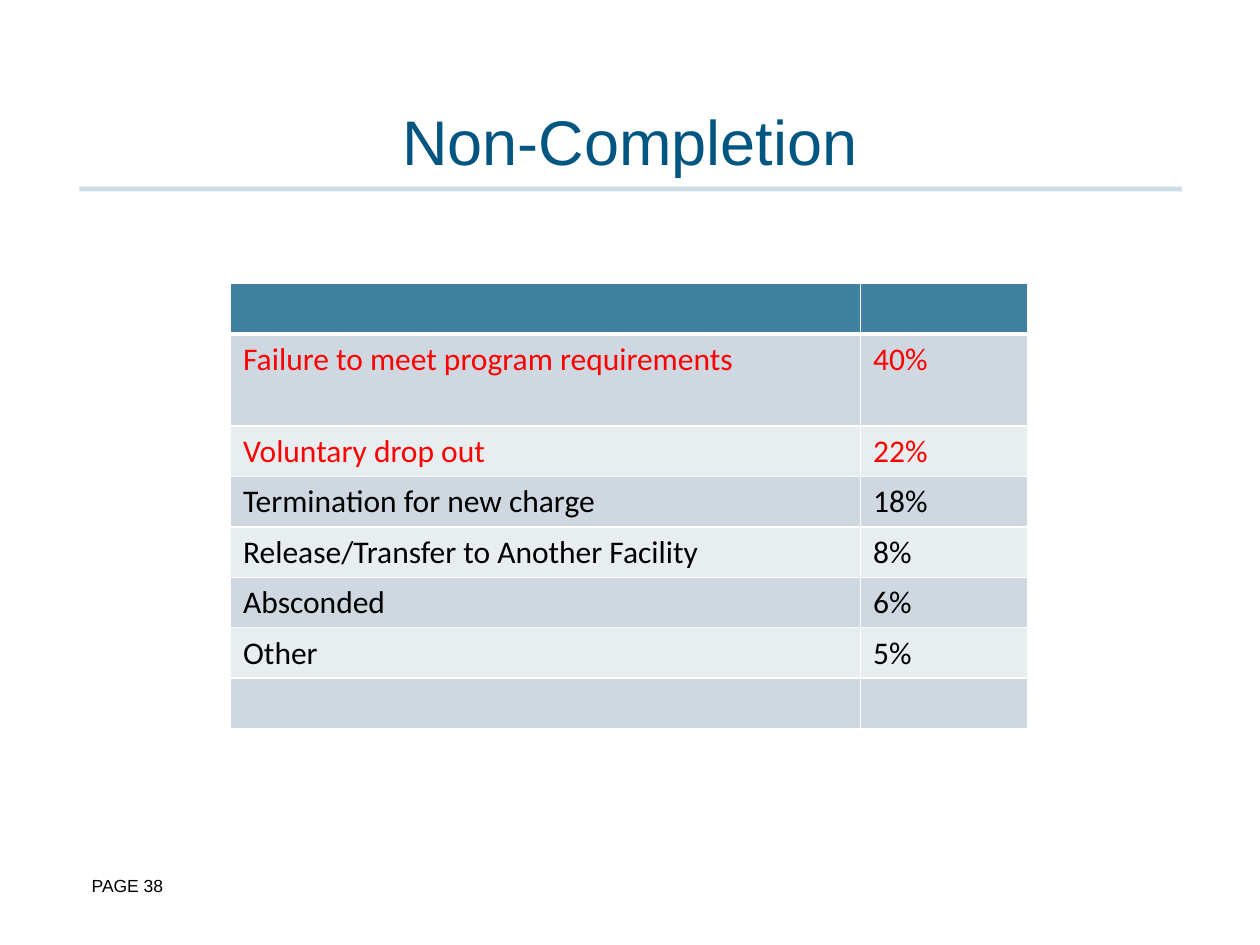
"""Build the Non-Completion slide: a title over a rule, a table and a page label."""
from lxml.etree import SubElement
from pptx import Presentation
from pptx.dml.color import RGBColor
from pptx.enum.shapes import MSO_CONNECTOR as Connector
from pptx.enum.text import MSO_ANCHOR as Anchor, PP_ALIGN as Align
from pptx.oxml.ns import qn
from pptx.util import Inches, Pt

WIDTH, HEIGHT = Inches(10), Inches(7.5)
BLUE = RGBColor(0x00, 0x55, 0x81)
HEADER = RGBColor(0x40, 0x80, 0xA1)
BANDS = (RGBColor(0xCF, 0xD8, 0xE0), RGBColor(0xE8, 0xED, 0xF0))
RED = RGBColor(0xFF, 0x00, 0x00)
BLACK = RGBColor(0x00, 0x00, 0x00)

REASONS = [
    ("", "", BLACK),
    ("Failure to meet program requirements", "40%", RED),
    ("Voluntary drop out", "22%", RED),
    ("Termination for new charge", "18%", BLACK),
    ("Release/Transfer to Another Facility", "8%", BLACK),
    ("Absconded", "6%", BLACK),
    ("Other", "5%", BLACK),
    ("", "", BLACK),
]
COLUMN_WIDTHS = (5, 1.33)
ROW_HEIGHT, TALL_ROW_HEIGHT = 0.4, 0.73


def across(share):
    """Turn a share of the slide's width into a length."""
    return round(WIDTH * share)


def down(share):
    """Turn a share of the slide's height into a length."""
    return round(HEIGHT * share)


def write(frame, text, *, size, font="Arial", color=BLACK, align=None, after=None):
    """Put one formatted paragraph into a text frame."""
    paragraph = frame.paragraphs[0]
    paragraph.alignment = align
    paragraph.space_after = after
    run = paragraph.add_run()
    run.text = text
    run.font.size = Pt(size)
    run.font.name = font
    run.font.color.rgb = color


def add_label(slide, box, text, *, anchor=Anchor.TOP, inset=None, **text_format):
    """Add a text box whose box is left, top, width and height as slide shares."""
    left, top, width, height = box
    shape = slide.shapes.add_textbox(across(left), down(top), across(width), down(height))
    frame = shape.text_frame
    frame.word_wrap = True
    frame.vertical_anchor = anchor
    if inset is not None:
        frame.margin_left = frame.margin_right = inset
        frame.margin_top = frame.margin_bottom = inset
    write(frame, text, **text_format)


def add_rule(slide, left, right, top):
    """Add the translucent horizontal rule under the title."""
    rule = slide.shapes.add_connector(
        Connector.STRAIGHT, across(left), down(top), across(right), down(top))
    rule.line.color.rgb = BLUE
    rule.line.width = Pt(2.75)
    properties = rule._element.spPr
    color = next(properties.iter(qn("a:srgbClr")))
    SubElement(color, qn("a:alpha"), val="20000")
    SubElement(properties, qn("a:effectLst"))


def set_borders(cell, bottom_width):
    """Give a cell white borders, with its own width at the bottom."""
    properties = cell._tc.get_or_add_tcPr()
    widths = {"a:lnL": 1, "a:lnR": 1, "a:lnT": 1, "a:lnB": bottom_width}
    for position, (side, width) in enumerate(widths.items()):
        line = SubElement(properties, qn(side), w=str(Pt(width)))
        fill = SubElement(line, qn("a:solidFill"))
        SubElement(fill, qn("a:srgbClr"), val="FFFFFF")
        properties.insert(position, line)


def add_reason_table(slide, left, top):
    """Add the banded table of reasons and their percentages."""
    heights = [TALL_ROW_HEIGHT if row == 1 else ROW_HEIGHT for row in range(len(REASONS))]
    table = slide.shapes.add_table(
        len(REASONS), len(COLUMN_WIDTHS), across(left), down(top),
        Inches(sum(COLUMN_WIDTHS)), Inches(sum(heights))).table
    for column, width in zip(table.columns, COLUMN_WIDTHS):
        column.width = Inches(width)
    for row, (height, (*texts, color)) in enumerate(zip(heights, REASONS)):
        table.rows[row].height = Inches(height)
        for column, text in enumerate(texts):
            cell = table.cell(row, column)
            cell.fill.solid()
            cell.fill.fore_color.rgb = BANDS[(row - 1) % 2] if row else HEADER
            set_borders(cell, 1 if row else 3)
            if text:
                write(cell.text_frame, text, size=18, font="Calibri", color=color)


def main():
    """Build and save the presentation."""
    presentation = Presentation()
    presentation.slide_width, presentation.slide_height = WIDTH, HEIGHT
    slide = presentation.slides.add_slide(presentation.slide_layouts[6])
    add_label(slide, (0.063, 0.919, 0.106, 0.069), "PAGE 38", size=10, after=Pt(6))
    add_rule(slide, 0.063, 0.938, 0.2)
    add_label(slide, (0.05, 0.012, 0.9, 0.176), "Non-Completion", size=36, color=BLUE,
              align=Align.CENTER, anchor=Anchor.BOTTOM, inset=0)
    add_reason_table(slide, 0.183, 0.3)
    presentation.save("out.pptx")


if __name__ == "__main__":
    main()
